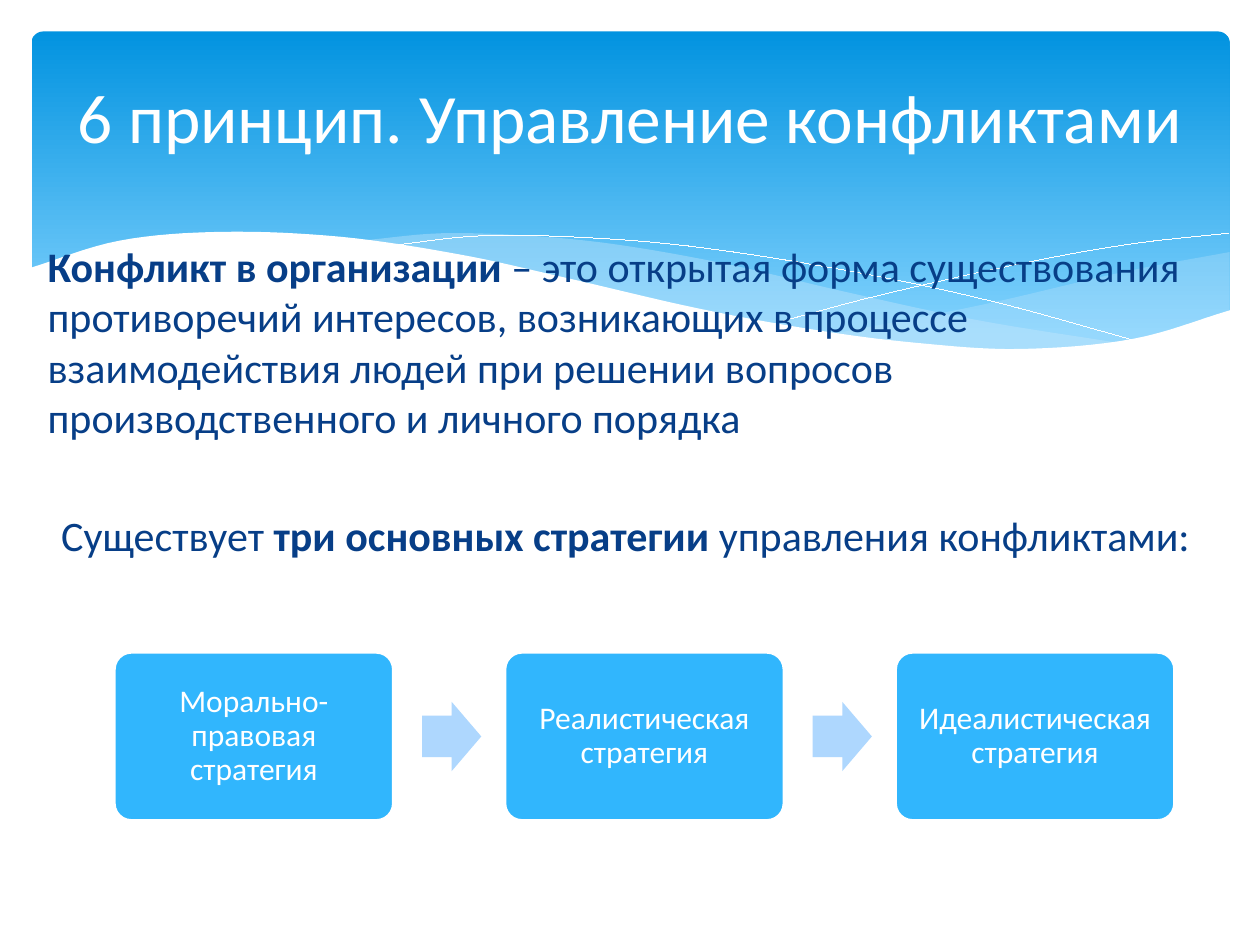
"""Build the slide about the sixth principle, conflict management."""
import pptx
import pptx.dml.color
import pptx.enum.shapes
import pptx.enum.text
import pptx.oxml
import pptx.oxml.ns
import pptx.util
from pptx.util import Inches

COLORS = {
    "white": "FFFFFF",
    "banner_top": "0293E0",
    "banner_bottom": "83D3FE",
    "wave": "C6E7FC",
    "text": "073E87",
    "card": "31B6FD",
    "arrow": "AED7FE",
}
SHAPES = pptx.enum.shapes.MSO_SHAPE
CENTER = pptx.enum.text.PP_ALIGN.CENTER
MIDDLE = pptx.enum.text.MSO_ANCHOR.MIDDLE
HAIRLINE = pptx.util.Pt(0.01)
rgb = pptx.dml.color.RGBColor.from_string


def style(paragraph, size, color):
    """Set the typeface, size and colour of a paragraph."""
    paragraph.font.name = "Calibri"
    paragraph.font.size = pptx.util.Pt(size)
    paragraph.font.color.rgb = rgb(COLORS[color])


def smooth(knots, steps=8):
    """Return points of a Catmull-Rom curve that passes through the knots."""
    before = [2 * a - b for a, b in zip(knots[0], knots[1])]
    after = [2 * a - b for a, b in zip(knots[-1], knots[-2])]
    padded = [before, *knots, after]
    points = [knots[0]]
    for quartet in zip(padded, padded[1:], padded[2:], padded[3:]):
        for step in range(1, steps + 1):
            t = step / steps
            points.append([
                b + t * (c - a) / 2
                + t ** 2 * (2 * a - 5 * b + 4 * c - d) / 2
                + t ** 3 * (3 * b - a - 3 * c + d) / 2
                for a, b, c, d in zip(*quartet)])
    return points


deck = pptx.Presentation()
deck.slide_width = Inches(10)
deck.slide_height = Inches(7.5)
page = deck.slides.add_slide(deck.slide_layouts[6])

banner = page.shapes.add_shape(
    SHAPES.ROUNDED_RECTANGLE, Inches(0.25), Inches(0.25), Inches(9.51), Inches(2.7))
banner.adjustments[0] = 0.034
banner.shadow.inherit = False
banner.line.fill.background()
banner.fill.gradient()
banner.fill.gradient_angle = 270
stops = (("banner_top", 0), ("banner_bottom", 0.9))
for stop, (color, position) in zip(banner.fill.gradient_stops, stops):
    stop.color.rgb = rgb(COLORS[color])
    stop.position = position

right_top = [(9.76, 2), (8.91, 2.16), (7.79, 2.42), (6.61, 2.65)]
right_bottom = [(6.61, 2.65), (7.32, 2.74), (8.03, 2.78), (8.72, 2.74), (9.28, 2.63), (9.76, 2.47)]
middle_top = [(8.93, 2.73), (7.75, 2.54), (6.68, 2.31), (5.69, 2.08), (4.65, 1.91),
              (3.61, 1.85), (2.86, 1.91)]
middle_bottom = [(2.86, 1.91), (3.83, 2.07), (4.91, 2.32), (6.01, 2.55), (7.09, 2.72),
                 (8.07, 2.78), (8.93, 2.73)]
falling_line = [(3.09, 1.95), (3.87, 1.87), (4.89, 1.9), (5.82, 2), (6.95, 2.19),
                (7.95, 2.41), (9.07, 2.72)]
rising_line = [(6.13, 2.57), (6.95, 2.35), (8.06, 2.1), (8.95, 1.94), (9.75, 1.85)]
white_top = [(0.23, 2.13), (0.95, 1.91), (1.77, 1.84), (2.71, 1.88), (3.65, 2.02), (4.47, 2.2),
             (5.55, 2.45), (6.48, 2.62), (7.26, 2.72), (8.09, 2.77), (8.99, 2.69), (9.77, 2.46)]
white_bottom = [(9.77, 3.29), (0.23, 3.29)]

curves = (
    ((right_top, right_bottom), "wave", 29),
    ((middle_top, middle_bottom), "wave", 40),
    ((falling_line,), None, 100),
    ((rising_line,), None, 100),
    ((white_top, white_bottom), "white", 100),
)
for edges, color, opacity in curves:
    corners = [(Inches(x), Inches(y)) for edge in edges for x, y in smooth(edge)]
    builder = page.shapes.build_freeform(*corners[0])
    builder.add_line_segments(corners[1:], close=color is not None)
    curve = builder.convert_to_shape()
    curve.shadow.inherit = False
    if color is None:
        curve.fill.background()
        curve.line.color.rgb = rgb(COLORS["white"])
        curve.line.width = HAIRLINE
        continue
    curve.line.fill.background()
    curve.fill.solid()
    curve.fill.fore_color.rgb = rgb(COLORS[color])
    if opacity < 100:
        tint = curve.element.spPr.find(".//" + pptx.oxml.ns.qn("a:srgbClr"))
        tint.append(pptx.oxml.parse_xml(
            f'<a:alpha {pptx.oxml.ns.nsdecls("a")} val="{opacity * 1000}"/>'))

body = page.shapes.add_textbox(Inches(0.28), Inches(1.86), Inches(9.37), Inches(4.84))
body.text_frame.word_wrap = True
definition = body.text_frame.paragraphs[0]
strategies = body.text_frame.add_paragraph()
strategies.alignment = CENTER
strategies.space_before = pptx.util.Pt(38.5)
passages = (
    (definition, (
        ("Конфликт в организации ", True),
        ("– это открытая форма существования противоречий интересов, возникающих "
         "в процессе взаимодействия людей при решении вопросов производственного "
         "и личного порядка", False))),
    (strategies, (
        ("Существует ", False),
        ("три основных стратегии ", True),
        ("управления конфликтами:", False))),
)
for para, pieces in passages:
    style(para, 24, "text")
    for words, bold in pieces:
        span = para.add_run()
        span.text = words
        span.font.bold = bold

title = page.shapes.add_textbox(Inches(0.5), Inches(0.37), Inches(9), Inches(1.1))
title.text_frame.word_wrap = True
title.text_frame.vertical_anchor = MIDDLE
heading = title.text_frame.paragraphs[0]
heading.text = "6 принцип. Управление конфликтами"
heading.alignment = CENTER
style(heading, 39.6, "white")

names = ("Морально-правовая стратегия", "Реалистическая стратегия", "Идеалистическая стратегия")
card_width, card_height, card_top, card_pitch = 2.21, 1.33, 5.18, 3.1
arrow_width, arrow_height = 0.47, 0.55
arrow_offset = card_width + 0.23
arrow_top = card_top + (card_height - arrow_height) / 2
for index, name in enumerate(names):
    left = 0.91 + card_pitch * index
    card = page.shapes.add_shape(
        SHAPES.ROUNDED_RECTANGLE,
        Inches(left), Inches(card_top), Inches(card_width), Inches(card_height))
    card.adjustments[0] = 0.1
    card.shadow.inherit = False
    card.fill.solid()
    card.fill.fore_color.rgb = rgb(COLORS["card"])
    card.line.color.rgb = rgb(COLORS["white"])
    card.line.width = pptx.util.Pt(1.25)
    frame = card.text_frame
    frame.word_wrap = True
    frame.vertical_anchor = MIDDLE
    frame.margin_left = frame.margin_right = Inches(0.07)
    frame.margin_top = frame.margin_bottom = Inches(0.07)
    label = frame.paragraphs[0]
    label.text = name
    label.alignment = CENTER
    label.line_spacing = 0.9
    style(label, 18, "white")
    if index < len(names) - 1:
        arrow = page.shapes.add_shape(
            SHAPES.RIGHT_ARROW, Inches(left + arrow_offset), Inches(arrow_top),
            Inches(arrow_width), Inches(arrow_height))
        arrow.adjustments[0] = 0.6
        arrow.shadow.inherit = False
        arrow.fill.solid()
        arrow.fill.fore_color.rgb = rgb(COLORS["arrow"])
        arrow.line.fill.background()

deck.save("out.pptx")
